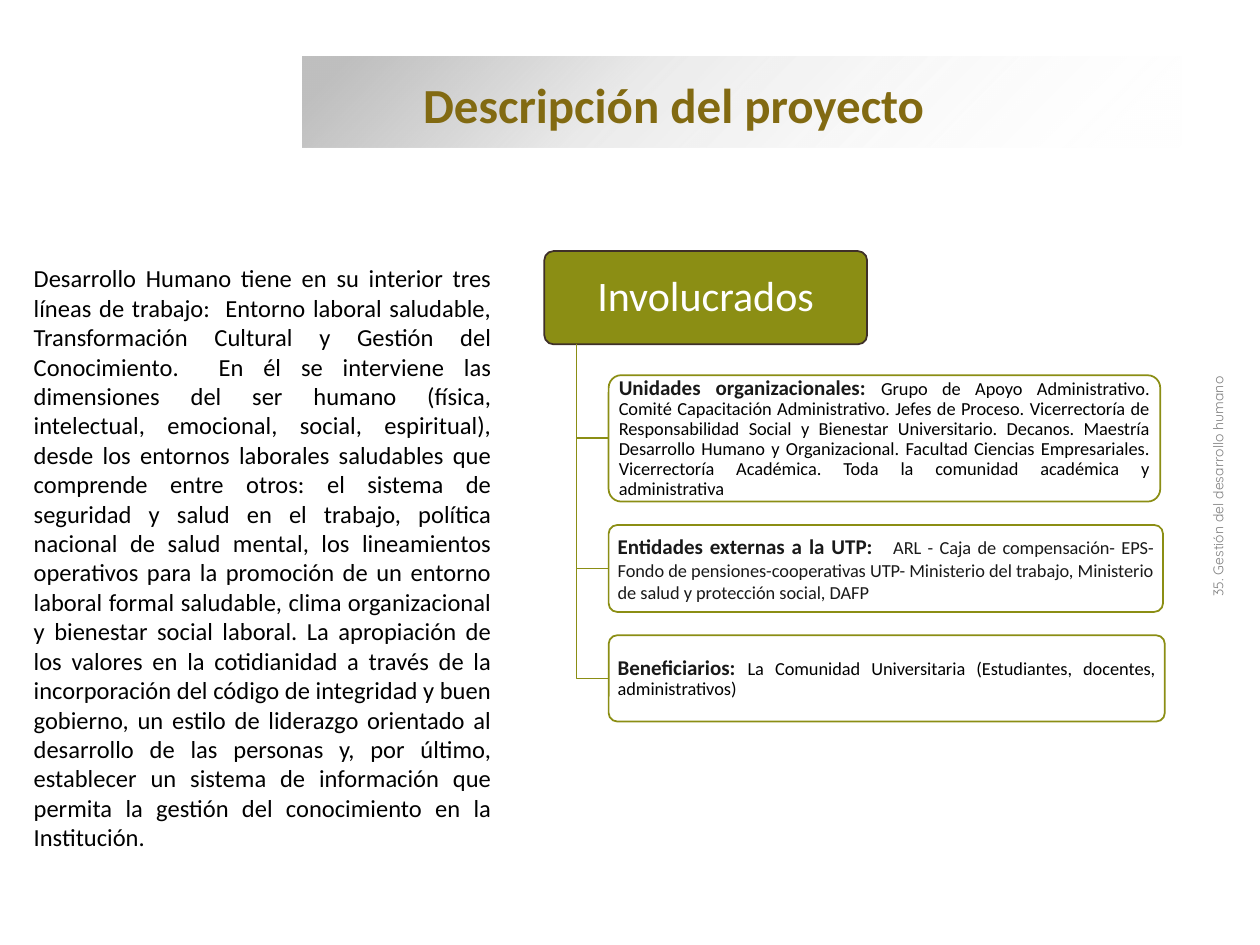
from dataclasses import dataclass

from lxml.etree import SubElement
from pptx import Presentation
from pptx.dml.color import RGBColor
from pptx.enum.shapes import MSO_SHAPE
from pptx.enum.text import MSO_ANCHOR, PP_ALIGN
from pptx.oxml import parse_xml
from pptx.oxml.ns import nsdecls, qn
from pptx.util import Pt

HEX = {
    "gold": "826A12", "olive": "8B8E14", "brown": "3F3029", "ink": "191919",
    "black": "000000", "white": "FFFFFF", "silver": "BFBFBF", "gray": "808080",
}
FONT = "Calibri"
TRUNK, EDGE = 329.4, 347.8  # x of the tree trunk and of the boxes
FOOT = 196.8  # bottom of the head box


@dataclass
class Item:
    top: float
    width: float
    height: float
    label: str
    text: str
    color: str = "black"
    space: float = 0.9


ITEMS = [
    Item(214.4, 315.2, 72.2, "Unidades organizacionales: ",
         "Grupo de Apoyo Administrativo. Comité Capacitación Administrativo. "
         "Jefes de Proceso. Vicerrectoría de Responsabilidad Social y Bienestar "
         "Universitario. Decanos. Maestría Desarrollo Humano y Organizacional. "
         "Facultad Ciencias Empresariales. Vicerrectoría Académica. "
         "Toda la comunidad académica y administrativa"),
    Item(300, 316.8, 49.7, "Entidades externas a la UTP:  ",
         " ARL - Caja de compensación- EPS- Fondo de pensiones-cooperativas UTP- "
         "Ministerio del trabajo, Ministerio de salud y protección social, DAFP ",
         "ink", 1.0),
    Item(363, 317.8, 49.3, "Beneficiarios: ",
         "La Comunidad Universitaria (Estudiantes, docentes, administrativos)"),
]

# Sentences of the one description paragraph
BODY = [
    "Desarrollo Humano tiene en su interior tres líneas de trabajo:  Entorno laboral "
    "saludable, Transformación Cultural y Gestión del Conocimiento. ",
    "En él se interviene las dimensiones del ser humano (física, intelectual, emocional, "
    "social, espiritual), desde los entornos laborales saludables que comprende entre "
    "otros: el sistema de seguridad y salud en el trabajo, política nacional de salud "
    "mental, los lineamientos operativos para la promoción de un entorno laboral formal "
    "saludable, clima organizacional y bienestar social laboral.",
    "La apropiación de los valores en la cotidianidad a través de la incorporación del "
    "código de integridad y buen gobierno, un estilo de liderazgo orientado al desarrollo "
    "de las personas y, por último, establecer un sistema de información que permita la "
    "gestión del conocimiento en la Institución.",
]


def rgb(name: str) -> RGBColor:
    return RGBColor.from_string(HEX[name])


def style(font, size: float, color: str, bold: bool = False, face: str = FONT) -> None:
    font.name, font.size, font.bold = face, Pt(size), bold
    font.color.rgb = rgb(color)


def label(slide, box: tuple, text: str, size: float, color: str,
          align=PP_ALIGN.LEFT, bold: bool = False, face: str = FONT):
    shape = slide.shapes.add_textbox(*map(Pt, box))
    shape.text_frame.word_wrap = True
    para = shape.text_frame.paragraphs[0]
    para.text, para.alignment = text, align
    style(para.font, size, color, bold, face)
    return shape


def panel(slide, box: tuple, fill: str, line: str, pad: float):
    shape = slide.shapes.add_shape(MSO_SHAPE.ROUNDED_RECTANGLE, *map(Pt, box))
    shape.adjustments[0] = 0.1
    shape.shadow.inherit = False
    shape.fill.solid()
    shape.fill.fore_color.rgb = rgb(fill)
    shape.line.color.rgb = rgb(line)
    shape.line.width = Pt(1)
    frame = shape.text_frame
    frame.word_wrap = True
    frame.vertical_anchor = MSO_ANCHOR.MIDDLE
    frame.margin_left = frame.margin_right = Pt(pad)
    frame.margin_top = frame.margin_bottom = Pt(pad)
    return shape


def branch(slide, mid: float) -> None:
    pen = slide.shapes.build_freeform(Pt(TRUNK), Pt(FOOT))
    pen.add_line_segments([(Pt(TRUNK), Pt(mid)), (Pt(EDGE), Pt(mid))], close=False)
    shape = pen.convert_to_shape()
    shape.shadow.inherit = False
    shape.fill.background()
    shape.line.color.rgb = rgb("olive")
    shape.line.width = Pt(1)


def entry(slide, item: Item) -> None:
    branch(slide, item.top + item.height / 2)
    shape = panel(slide, (EDGE, item.top, item.width, item.height),
                  "white", "olive", 3.7)
    tone = shape._element.spPr.find(qn("a:solidFill"))[0]
    SubElement(tone, qn("a:alpha"), val="90000")
    para = shape.text_frame.paragraphs[0]
    para.alignment, para.line_spacing = PP_ALIGN.JUSTIFY, item.space
    for text, size, color, bold in ((item.label, 12, "ink", True),
                                    (item.text, 10.5, item.color, False)):
        run = para.add_run()
        run.text = text
        style(run.font, size, color, bold)


def band(slide, box: tuple) -> None:
    shape = slide.shapes.add_shape(MSO_SHAPE.RECTANGLE, *map(Pt, box))
    shape.shadow.inherit = False
    shape.line.fill.background()
    stops = "".join(
        f'<a:gs pos="{pos}000"><a:srgbClr val="{HEX[color]}">'
        f'<a:alpha val="{alpha}000"/></a:srgbClr></a:gs>'
        for pos, color, alpha in ((5, "silver", 100), (37, "silver", 31),
                                  (100, "white", 0)))
    grad = parse_xml(f'<a:gradFill {nsdecls("a")}><a:gsLst>{stops}</a:gsLst>'
                     '<a:lin ang="2700000" scaled="0"/></a:gradFill>')
    shape._element.spPr.find(qn("a:prstGeom")).addnext(grad)


def main() -> None:
    deck = Presentation()
    deck.slide_width, deck.slide_height = Pt(720), Pt(540)
    slide = deck.slides.add_slide(deck.slide_layouts[6])

    # Title on its fading band
    band(slide, (172.8, 32.4, 502.6, 51.8))
    title = label(slide, (234.7, 38.9, 446.4, 41), "Descripción del proyecto",
                  28, "gold", bold=True)
    title.text_frame.vertical_anchor = MSO_ANCHOR.MIDDLE

    # Tree of those involved
    head = panel(slide, (311, 143.5, 184.5, 53.3), "olive", "brown", 4)
    para = head.text_frame.paragraphs[0]
    para.text, para.alignment, para.line_spacing = "Involucrados", PP_ALIGN.CENTER, 0.9
    style(para.font, 24, "white")
    for item in ITEMS:
        entry(slide, item)

    # Description and side note
    label(slide, (12.2, 146.9, 275.8, 346.3), " ".join(BODY), 14, "black",
          PP_ALIGN.JUSTIFY)
    note = label(slide, (522, 269.3, 348.5, 17.3), "35. Gestión del desarrollo humano",
                 8, "gray", PP_ALIGN.CENTER, face="Quicksand")
    note.rotation = 270

    deck.save("out.pptx")


if __name__ == "__main__":
    main()
